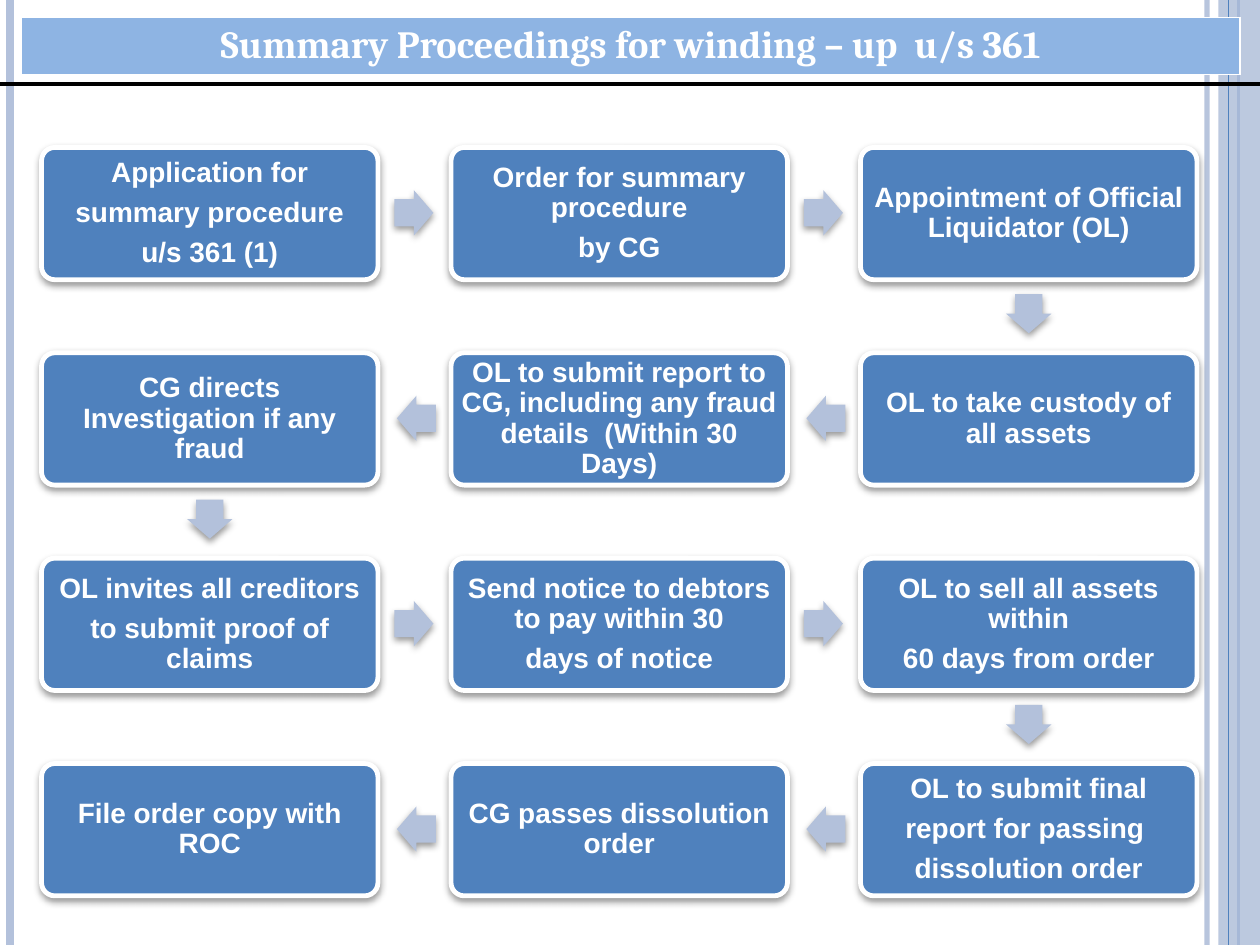
from lxml import etree
from pptx import Presentation
from pptx.dml.color import RGBColor
from pptx.enum.shapes import MSO_CONNECTOR, MSO_SHAPE
from pptx.enum.text import MSO_ANCHOR, PP_ALIGN
from pptx.oxml.ns import qn
from pptx.util import Inches, Pt

STRAIGHT = MSO_CONNECTOR.STRAIGHT
RECTANGLE = MSO_SHAPE.RECTANGLE
ROUNDED = MSO_SHAPE.ROUNDED_RECTANGLE
ARROW = MSO_SHAPE.RIGHT_ARROW
CENTER = PP_ALIGN.CENTER
MIDDLE = MSO_ANCHOR.MIDDLE

COLORS = {
    "blue": "4F81BD",
    "pale": "B3C1DB",
    "title": "8EB4E3",
    "white": "FFFFFF",
    "black": "000000",
}

LEFT, TOP = 0.33, 1.17
COLUMN_STEP, ROW_STEP = 3.25, 1.63
BOX_WIDTH, BOX_HEIGHT = 2.67, 1.05
ARROW_WIDTH, ARROW_HEIGHT = 0.31, 0.36
COLUMNS = 3

STEPS = [
    ["Application for", "summary procedure", "u/s 361 (1)"],
    ["Order for summary procedure", "by CG"],
    ["Appointment of Official Liquidator (OL)"],
    ["OL to take custody of all assets"],
    ["OL to submit report to", "CG, including any fraud details  (Within 30 Days)"],
    ["CG directs Investigation if any fraud"],
    ["OL invites all creditors", "to submit proof of claims"],
    ["Send notice to debtors to pay within 30", "days of notice"],
    ["OL to sell all assets within", "60 days from order"],
    ["OL to submit final", "report for passing ", "dissolution order"],
    ["CG passes dissolution order"],
    ["File order copy with ROC"],
]
TIGHT_STEP = 4


class FlowSlide:
    def __init__(self, slide):
        self.slide = slide

    def color(self, name):
        return RGBColor.from_string(COLORS[name])

    def set_alpha(self, element, percent):
        for color in element.iter(qn("a:srgbClr")):
            etree.SubElement(color, qn("a:alpha"), val=str(percent * 1000))

    def add_shadow(self, shape):
        effects = shape.element.spPr.find(qn("a:effectLst"))
        shadow = etree.SubElement(
            effects, qn("a:outerShdw"), blurRad=str(Pt(4)), dist=str(Pt(2)),
            dir="5400000", rotWithShape="0")
        etree.SubElement(shadow, qn("a:srgbClr"), val=COLORS["black"])
        self.set_alpha(shadow, 40)

    def line(self, start, end, color, weight, alpha=100):
        line = self.slide.shapes.add_connector(
            STRAIGHT, *(Inches(value) for value in (*start, *end)))
        line.line.color.rgb = self.color(color)
        line.line.width = Pt(weight)
        properties = line.element.spPr
        etree.SubElement(properties, qn("a:effectLst"))
        if alpha < 100:
            self.set_alpha(properties, alpha)

    def shape(self, kind, frame, color):
        shape = self.slide.shapes.add_shape(kind, *(Inches(value) for value in frame))
        shape.shadow.inherit = False
        shape.fill.solid()
        shape.fill.fore_color.rgb = self.color(color)
        shape.line.fill.background()
        return shape

    def band(self, frame, color, alpha):
        band = self.shape(RECTANGLE, frame, color)
        self.set_alpha(band.element.spPr, alpha)

    def set_text(self, para, text, size, font):
        para.text = text
        para.alignment = CENTER
        for span in para.runs:
            span.font.size = Pt(size)
            span.font.name = font
            span.font.bold = True
            span.font.color.rgb = self.color("white")

    def title(self, frame, text):
        table = self.slide.shapes.add_table(
            1, 1, *(Inches(value) for value in frame)).table
        table.first_row = False
        table.horz_banding = False
        cell = table.cell(0, 0)
        cell.fill.solid()
        cell.fill.fore_color.rgb = self.color("title")
        self.set_text(cell.text_frame.paragraphs[0], text, 22, "Cambria")

    def box(self, left, top, lines, gap):
        box = self.shape(ROUNDED, (left, top, BOX_WIDTH, BOX_HEIGHT), "blue")
        box.adjustments[0] = 0.1
        box.line.color.rgb = self.color("white")
        box.line.width = Pt(2.75)
        self.add_shadow(box)
        frame = box.text_frame
        frame.word_wrap = True
        frame.vertical_anchor = MIDDLE
        frame.margin_left = frame.margin_right = Inches(0.04)
        frame.margin_top = frame.margin_bottom = Inches(0.04)
        frame.text = "\n".join(lines)
        for para, text in zip(frame.paragraphs, lines):
            self.set_text(para, text, 16, "Arial")
            para.line_spacing = 0.9
            para.space_after = Pt(gap)

    def arrow(self, left, top, rotation):
        arrow = self.shape(ARROW, (left, top, ARROW_WIDTH, ARROW_HEIGHT), "pale")
        arrow.adjustments[0] = 0.6
        arrow.adjustments[1] = 0.5
        arrow.rotation = rotation
        self.add_shadow(arrow)

    def flow(self, steps):
        for index, lines in enumerate(steps):
            row, place = divmod(index, COLUMNS)
            forward = row % 2 == 0
            column = place if forward else COLUMNS - 1 - place
            left = LEFT + column * COLUMN_STEP
            top = TOP + row * ROW_STEP
            self.box(left, top, lines, 0 if index == TIGHT_STEP else 5.6)
            if index == len(steps) - 1:
                continue
            if place == COLUMNS - 1:
                self.arrow(left + (BOX_WIDTH - ARROW_WIDTH) / 2, top + 1.14, 90)
            elif forward:
                self.arrow(left + 2.8, top + 0.34, 0)
            else:
                self.arrow(left - 0.43, top + 0.34, 180)


def main():
    deck = Presentation()
    deck.slide_width = Inches(10)
    deck.slide_height = Inches(7.5)
    page = FlowSlide(deck.slides.add_slide(deck.slide_layouts[6]))

    page.line((9.58, 0), (9.58, 7.5), "pale", 3, 93)
    page.line((0.08, 0), (0.08, 7.5), "pale", 4.5)
    page.line((9.83, 0), (9.83, 7.5), "blue", 1.5)
    page.band((9.67, 0, 0.33, 7.5), "pale", 87)
    page.line((9.75, 0), (9.75, 7.5), "blue", 0.75)
    page.title((0.17, 0.14, 9.67, 0.42), "Summary Proceedings for winding – up  u/s 361")
    page.line((0, 0.67), (10, 0.67), "black", 2.25)
    page.flow(STEPS)

    deck.save("out.pptx")


if __name__ == "__main__":
    main()
